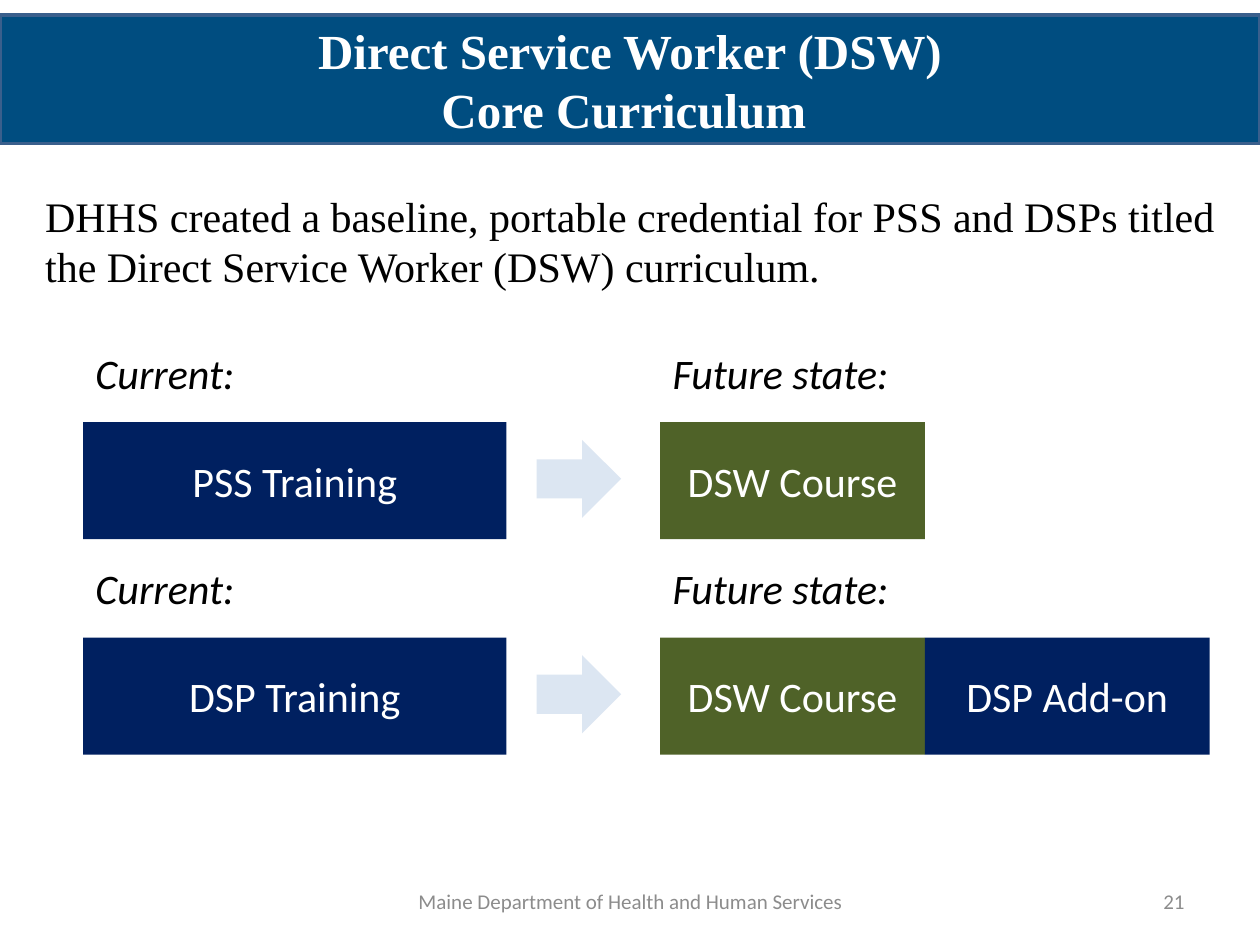
from typing import NamedTuple

from pptx import Presentation
from pptx.dml.color import RGBColor
from pptx.enum.shapes import MSO_SHAPE as Kind
from pptx.enum.text import MSO_ANCHOR as Anchor, PP_ALIGN as Align
from pptx.util import Inches, Pt

HUES = {
    "band": "004D80", "edge": "3A5F8C", "navy": "002060", "green": "4F6228",
    "arrow": "DCE6F2", "white": "FFFFFF", "black": "000000", "grey": "8C8C8C",
}
SERIF, SANS = "Times New Roman", "Calibri"


class Area(NamedTuple):
    """Left, top, width and height in percent of the slide's size."""
    x: float
    y: float
    w: float
    h: float


class Style(NamedTuple):
    size: int = 24
    hue: str = "black"
    face: str = SANS
    bold: bool = False
    italic: bool = False
    align: Align = Align.LEFT
    anchor: Anchor = Anchor.TOP


class Course(NamedTuple):
    text: str
    hue: str
    x: float
    w: float


LABEL = Style(italic=True)
BLOCK = Style(hue="white", align=Align.CENTER, anchor=Anchor.MIDDLE)
FOOT = BLOCK._replace(size=12, hue="grey")
TITLE = BLOCK._replace(size=28, face=SERIF, bold=True)

LEFT, RIGHT = 6.6, 52.4
TOP, PITCH, TALL = 44.67, 22.8, 12.4
DSW = Course("DSW Course", "green", RIGHT, 21)
ROWS = [
    [Course("PSS Training", "navy", LEFT, 33.6), DSW],
    [Course("DSP Training", "navy", LEFT, 33.6), DSW,
     Course("DSP Add-on", "navy", DSW.x + DSW.w, 22.6)],
]

deck = Presentation()
deck.slide_width, deck.slide_height = Inches(10), Inches(7.5)
slide = deck.slides.add_slide(deck.slide_layouts[6])


def color(name: str) -> RGBColor:
    return RGBColor.from_string(HUES[name])


def place(area: Area) -> list[int]:
    """Turn percentages into slide lengths."""
    sides = (deck.slide_width, deck.slide_height) * 2
    return [round(part * side / 100) for part, side in zip(area, sides)]


def write(shape, text: str, style: Style) -> None:
    frame = shape.text_frame
    frame.word_wrap = True
    frame.vertical_anchor = style.anchor
    frame.text = text
    for para in frame.paragraphs:
        para.alignment = style.align
        font = para.font
        font.name, font.size = style.face, Pt(style.size)
        font.bold, font.italic = style.bold, style.italic
        font.color.rgb = color(style.hue)


def add_text(area: Area, text: str, style: Style) -> None:
    write(slide.shapes.add_textbox(*place(area)), text, style)


def add_solid(kind: Kind, area: Area, hue: str):
    shape = slide.shapes.add_shape(kind, *place(area))
    shape.shadow.inherit = False
    shape.fill.solid()
    shape.fill.fore_color.rgb = color(hue)
    shape.line.fill.background()
    return shape


def add_row(top: float, row: list[Course]) -> None:
    """Draw one change from current to future training."""
    for item in row:
        block = add_solid(Kind.RECTANGLE, Area(item.x, top, item.w, TALL), item.hue)
        write(block, item.text, BLOCK)
    for x, text in ((LEFT, "Current:"), (RIGHT, "Future state:")):
        add_text(Area(x, top - 8.6, 37.6, 6.67), text, LABEL)
    add_solid(Kind.RIGHT_ARROW, Area(42.6, top + 1.87, 6.7, 8.27), "arrow")


band = add_solid(Kind.RECTANGLE, Area(0, 1.6, 100, 13.6), "band")
band.line.color.rgb = color("edge")
band.line.width = Pt(2)
write(band, "Direct Service Worker (DSW)\nCore Curriculum ", TITLE)

add_text(Area(2.6, 19.47, 96.5, 17.47),
         "DHHS created a baseline, portable credential for PSS and DSPs titled "
         "the Direct Service Worker (DSW) curriculum.", Style(face=SERIF))

for i, row in enumerate(ROWS):
    add_row(TOP + i * PITCH, row)

add_text(Area(31.7, 92.67, 36.7, 5.33),
         "Maine Department of Health and Human Services", FOOT)
add_text(Area(71.7, 92.67, 23.3, 5.33), "21", FOOT._replace(align=Align.RIGHT))

deck.save("out.pptx")
